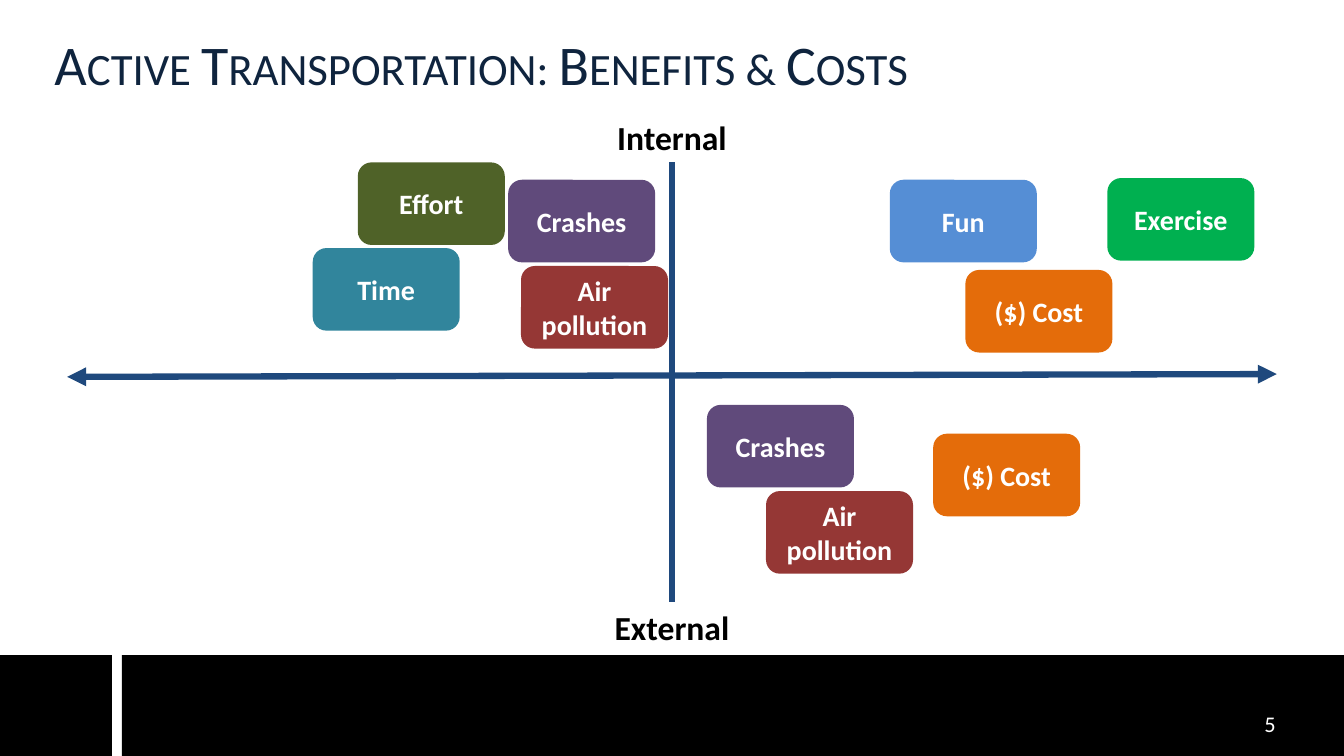
import pptx
import pptx.util
import pptx.dml.color
import pptx.enum.shapes
import pptx.enum.text
import pptx.oxml
import pptx.oxml.ns

Pt = pptx.util.Pt
Kind = pptx.enum.shapes.MSO_SHAPE
Align = pptx.enum.text.PP_ALIGN
Anchor = pptx.enum.text.MSO_ANCHOR
Fit = pptx.enum.text.MSO_AUTO_SIZE


def paint(color, code):
    color.rgb = pptx.dml.color.RGBColor.from_string(code)


def write(shape, words, size, code, bold, align, anchor):
    frame = shape.text_frame
    for key, val in {"word_wrap": True, "auto_size": Fit.NONE, "vertical_anchor": anchor}.items():
        setattr(frame, key, val)
    para = frame.paragraphs[0]
    para.alignment = align
    run = para.add_run()
    run.text = words
    for key, val in {"name": "Calibri", "size": Pt(size), "bold": bold}.items():
        setattr(run.font, key, val)
    paint(run.font.color, code)
    return run


deck = pptx.Presentation()
deck.slide_width, deck.slide_height = Pt(960), Pt(540)
slide = deck.slides.add_slide(deck.slide_layouts[5])
shapes = slide.shapes
paint_bg = slide.background.fill
paint_bg.solid()
paint(paint_bg.fore_color, "FFFFFF")

title = shapes.title
for key, val in {"left": 31.7, "top": 12.2, "width": 895.7, "height": 66.2}.items():
    setattr(title, key, Pt(val))
head = write(title, "Active Transportation: Benefits & Costs", 40, "0F243E", False, Align.LEFT, Anchor.MIDDLE)
head.font._element.set("cap", "small")

for left, width in [(0, 80), (87, 873)]:
    bar = shapes.add_shape(Kind.RECTANGLE, Pt(left), Pt(468), Pt(width), Pt(72))
    bar.shadow.inherit = False
    bar.fill.solid()
    paint(bar.fill.fore_color, "000000")
    bar.line.fill.background()

page = shapes.add_textbox(Pt(896), Pt(504), Pt(64), Pt(36))
write(page, "5", 16, "FFFFFF", False, Align.LEFT, Anchor.TOP)

axes = [((48, 269.2, 912, 267.2), ["headEnd", "tailEnd"]), ((480, 116, 480, 430), [])]
for ends, tips in axes:
    axis = shapes.add_connector(pptx.enum.shapes.MSO_CONNECTOR.STRAIGHT, *[Pt(end) for end in ends])
    axis.line.width = Pt(4.5)
    paint(axis.line.color, "1F497D")
    props = axis._element.spPr
    pptx.oxml.ns.qn("a:ln")
    for tip in tips:
        node = pptx.oxml.parse_xml(f'<a:{tip} {pptx.oxml.ns.nsdecls("a")} type="triangle"/>')
        axis.line._get_or_add_ln().append(node)
    props.append(pptx.oxml.parse_xml(f'<a:effectLst {pptx.oxml.ns.nsdecls("a")}/>'))

for words, top in [("Internal", 80), ("External", 430)]:
    label = shapes.add_textbox(Pt(424.5), Pt(top), Pt(111), Pt(36))
    write(label, words, 24, "000000", True, Align.CENTER, Anchor.TOP)

hues = {
    "Air pollution": "953735",
    "Exercise": "00B050",
    "Crashes": "604A7B",
    "($) Cost": "E46C0A",
    "Time": "31859C",
    "Fun": "558ED5",
    "Effort": "4F6228",
}
cards = [
    ("Air pollution", 372.2, 190),
    ("Exercise", 791, 127.2),
    ("Crashes", 363, 128.4),
    ("Air pollution", 547.2, 350.8),
    ("Crashes", 505, 289.2),
    ("($) Cost", 689.6, 192.8),
    ("Time", 223.4, 177.2),
    ("Fun", 635.6, 128.4),
    ("($) Cost", 666.6, 309.8),
    ("Effort", 255.6, 116),
]
for words, left, top in cards:
    card = shapes.add_shape(Kind.ROUNDED_RECTANGLE, Pt(left), Pt(top), Pt(105), Pt(59))
    card.shadow.inherit = False
    card.fill.solid()
    paint(card.fill.fore_color, hues[words])
    card.line.fill.background()
    write(card, words, 20, "FFFFFF", True, Align.CENTER, Anchor.MIDDLE)

deck.save("out.pptx")
